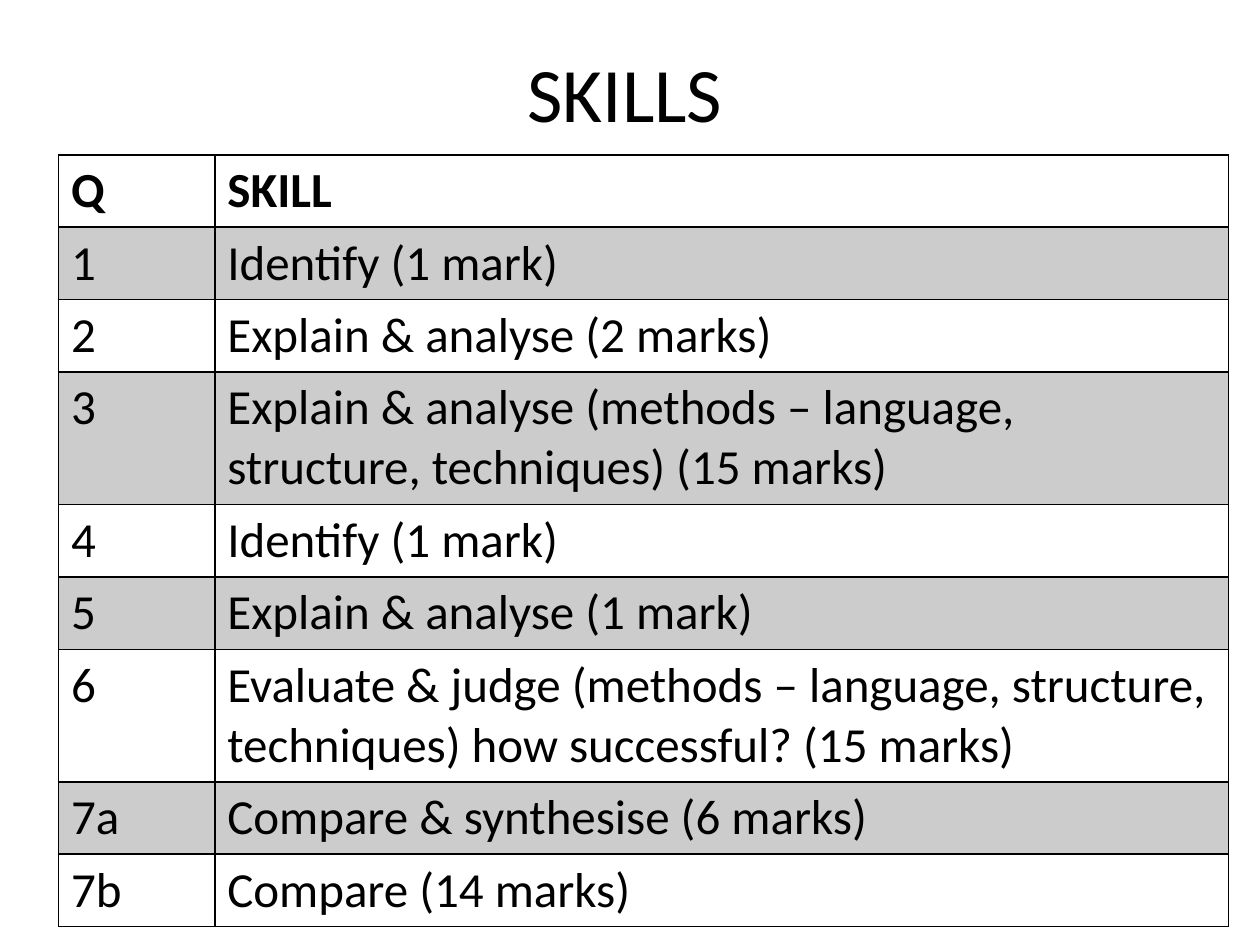
from typing import NamedTuple

from lxml.etree import SubElement
from pptx import Presentation
from pptx.dml.color import RGBColor as RGB
from pptx.enum.text import MSO_ANCHOR as Anchor, PP_ALIGN as Align
from pptx.oxml.ns import qn
from pptx.util import Cm, Pt

COLORS = {"ink": "000000", "plain": "FFFFFF", "band": "CCCCCC"}
FONT = "Calibri"
COLUMN_WIDTHS = (3.15, 20.43)
LINE_HEIGHT = 1.21
ROW_PADDING = 0.25


class Skill(NamedTuple):
    question: str
    text: str
    lines: int = 1


SKILLS = [
    Skill("Q", "SKILL"),
    Skill("1", "Identify (1 mark)"),
    Skill("2", "Explain & analyse (2 marks)"),
    Skill("3", "Explain & analyse (methods – language, structure, techniques) (15 marks)", 2),
    Skill("4", "Identify (1 mark)"),
    Skill("5", "Explain & analyse (1 mark)"),
    Skill("6", "Evaluate & judge (methods – language, structure, techniques) how successful? (15 marks)", 2),
    Skill("7a", "Compare & synthesise (6 marks)"),
    Skill("7b", "Compare (14 marks)"),
]


def set_text(tf, text: str, size: int, bold: bool = False) -> None:
    tf.text = text
    font = tf.paragraphs[0].runs[0].font
    font.name, font.size, font.bold = FONT, Pt(size), bold
    font.color.rgb = RGB.from_string(COLORS["ink"])


def add_borders(cell) -> None:
    props = cell._tc.get_or_add_tcPr()
    for side in ("a:lnL", "a:lnR", "a:lnT", "a:lnB"):
        line = SubElement(props, qn(side), w=str(Pt(1)))
        fill = SubElement(line, qn("a:solidFill"))
        SubElement(fill, qn("a:srgbClr"), val=COLORS["ink"])


def add_title(s, text: str) -> None:
    tf = s.shapes.add_textbox(Cm(1.65), Cm(0), Cm(21.9), Cm(3.68)).text_frame
    tf.word_wrap = True
    tf.vertical_anchor = Anchor.MIDDLE
    set_text(tf, text, 44)
    tf.paragraphs[0].alignment = Align.CENTER


def add_skill_table(s, skills: list[Skill]) -> None:
    heights = [skill.lines * LINE_HEIGHT + ROW_PADDING for skill in skills]
    table = s.shapes.add_table(
        len(skills), len(COLUMN_WIDTHS),
        Cm(1.18), Cm(3.12), Cm(sum(COLUMN_WIDTHS)), Cm(sum(heights)),
    ).table
    for column, width in zip(table.columns, COLUMN_WIDTHS):
        column.width = Cm(width)
    for i, (skill, height) in enumerate(zip(skills, heights)):
        table.rows[i].height = Cm(height)
        for cell, text in zip(table.rows[i].cells, (skill.question, skill.text)):
            set_text(cell.text_frame, text, 28, bold=i == 0)
            add_borders(cell)
            cell.fill.solid()
            cell.fill.fore_color.rgb = RGB.from_string(COLORS["band" if i % 2 else "plain"])


def main() -> None:
    prs = Presentation()
    prs.slide_width, prs.slide_height = Cm(25.4), Cm(19.05)
    s = prs.slides.add_slide(prs.slide_layouts[6])
    add_title(s, "SKILLS")
    add_skill_table(s, SKILLS)
    prs.save("out.pptx")


if __name__ == "__main__":
    main()
